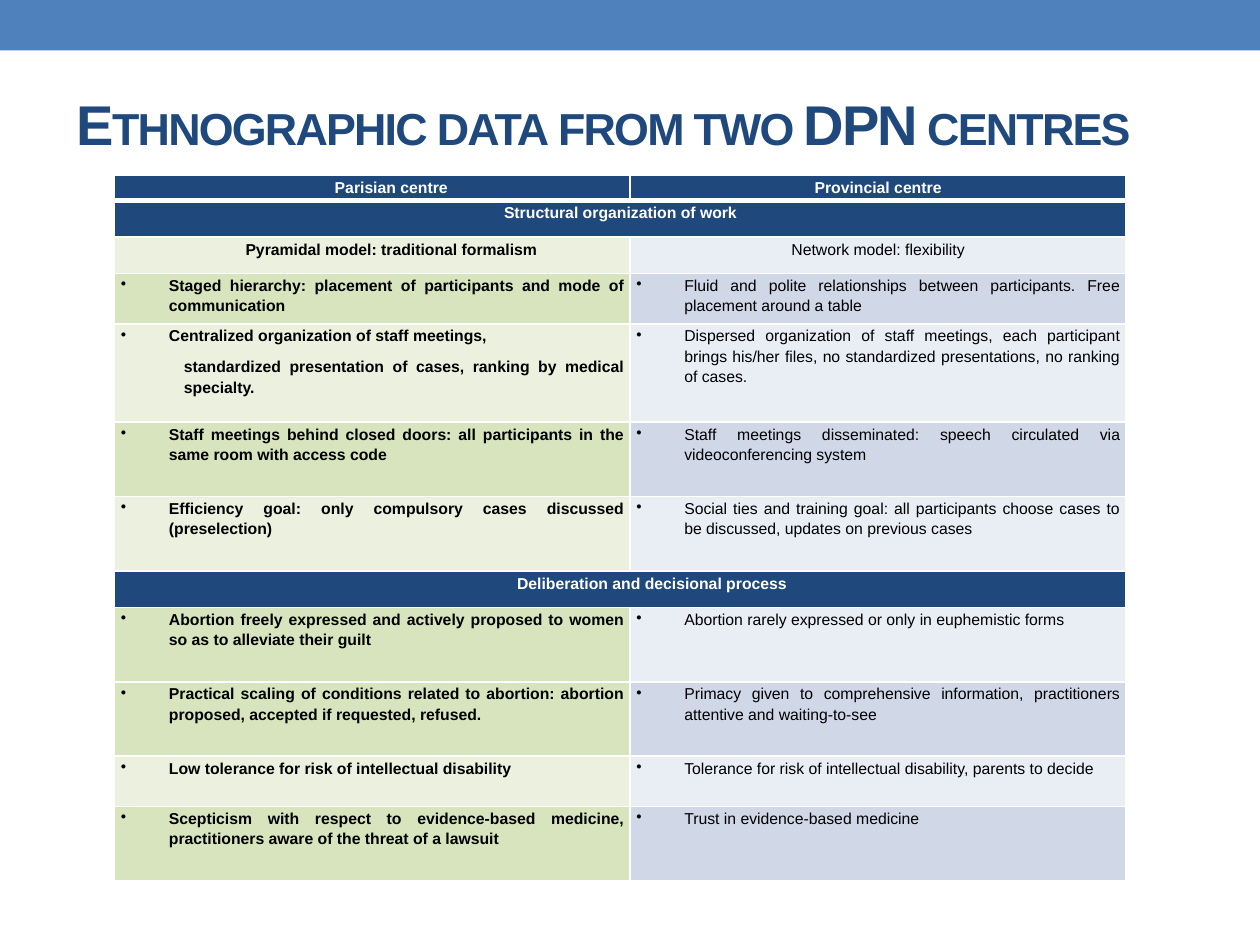
from lxml import etree
from pptx import Presentation
from pptx import util as u
from pptx.dml.color import RGBColor
from pptx.enum import shapes, text
from pptx.oxml import ns

HUES = {
    "bar": "4F81BD", "navy": "1F497D", "white": "FFFFFF", "black": "000000",
    "green": "EBF1DE", "lime": "D7E4BD", "pale": "E9EDF4", "blue": "D0D8E8",
}
MID, JUST = text.PP_ALIGN.CENTER, text.PP_ALIGN.JUSTIFY
HANG = 27.4
HEADS = ("Parisian centre", "Provincial centre")
MODELS = ("Pyramidal model: traditional formalism", "Network model: flexibility")
WORK = [
    (28.8, "Staged hierarchy: placement of participants and mode of communication",
     "Fluid and polite relationships between participants. Free placement around a table"),
    (56.2, "Centralized organization of staff meetings,\n"
     "standardized presentation of cases, ranking by medical specialty.",
     "Dispersed organization of staff meetings, each participant brings his/her files, "
     "no standardized presentations, no ranking of cases."),
    (42.5, "Staff meetings behind closed doors: all participants in the same room with access code",
     "Staff meetings disseminated: speech circulated via videoconferencing system"),
    (42.5, "Efficiency goal: only compulsory cases discussed (preselection)",
     "Social ties and training goal: all participants choose cases to be discussed, "
     "updates on previous cases"),
]
CHOICE = [
    (42.5, "Abortion freely expressed and actively proposed to women so as to alleviate their guilt",
     "Abortion rarely expressed or only in euphemistic forms"),
    (42.5, "Practical scaling of conditions related to abortion: abortion proposed, "
     "accepted if requested, refused.",
     "Primacy given to comprehensive information, practitioners attentive and waiting-to-see"),
    (28.8, "Low tolerance for risk of intellectual disability",
     "Tolerance for risk of intellectual disability, parents to decide"),
    (42.5, "Scepticism with respect to evidence-based medicine, practitioners aware of "
     "the threat of a lawsuit",
     "Trust in evidence-based medicine"),
]
SPLIT = 3 + len(WORK)


class Deck:
    def __init__(self):
        self.show = Presentation()
        self.show.slide_width, self.show.slide_height = u.Pt(720), u.Pt(540)
        self.slide = self.show.slides.add_slide(self.show.slide_layouts[6])
        self.face = "Arial"

    def hue(self, name):
        return RGBColor.from_string(HUES[name])

    def paint(self, item, name):
        item.fill.solid()
        item.fill.fore_color.rgb = self.hue(name)

    def style(self, para, size, name, bold):
        font = para.font
        font.name, font.size, font.bold = self.face, u.Pt(size), bold
        font.color.rgb = self.hue(name)

    def bar(self, box, name):
        bar = self.slide.shapes.add_shape(shapes.MSO_SHAPE.RECTANGLE, *map(u.Pt, box))
        bar.shadow.inherit = False
        self.paint(bar, name)
        bar.line.fill.background()

    def title(self, box, words):
        frame = self.slide.shapes.add_textbox(*map(u.Pt, box)).text_frame
        frame.word_wrap = True
        frame.vertical_anchor = text.MSO_ANCHOR.MIDDLE
        para = frame.paragraphs[0]
        run = para.add_run()
        run.text = words
        self.style(para, 32, "navy", True)
        props = run._r.get_or_add_rPr()
        props.set("cap", "small")
        props.set("spc", "-100")

    def grid(self, spot, cols, rows):
        box = (*spot, sum(cols), sum(rows))
        grid = self.slide.shapes.add_table(len(rows), len(cols), *map(u.Pt, box)).table
        grid.first_row = grid.horz_banding = False
        for col, wide in zip(grid.columns, cols):
            col.width = u.Pt(wide)
        for row, high in zip(grid.rows, rows):
            row.height = u.Pt(high)
        return grid

    def edge(self, cell, top, base):
        props = cell._tc.get_or_add_tcPr()
        sides = (("lnL", 1), ("lnR", 1), ("lnT", top), ("lnB", base))
        for spot, (side, wide) in enumerate(sides):
            line = etree.Element(ns.qn("a:" + side), w=str(u.Pt(wide)))
            fill = etree.SubElement(line, ns.qn("a:solidFill"))
            etree.SubElement(fill, ns.qn("a:srgbClr"), val=HUES["white"])
            props.insert(spot, line)

    def cell(self, cell, words, fill, ink="black", bold=True, align=MID,
             left=0, hang=0, lead=0, top=1, base=1):
        self.paint(cell, fill)
        self.edge(cell, top, base)
        cell.margin_left = cell.margin_right = u.Pt(3.6)
        cell.margin_top, cell.margin_bottom = u.Pt(0.7), 0
        cell.text_frame.text = words
        for spot, para in enumerate(cell.text_frame.paragraphs):
            self.style(para, 9, ink, bold)
            para.alignment, para.line_spacing = align, 1.15
            para.space_before, para.space_after = u.Pt(lead), u.Pt(6)
            props = para._p.get_or_add_pPr()
            dent = 0 if spot else hang
            props.set("marL", str(u.Pt(36 if spot else left)))
            props.set("indent", str(u.Pt(dent)))
            kind = "a:buChar" if dent else "a:buNone"
            mark = etree.Element(ns.qn(kind), {"char": "•"} if dent else {})
            props.find(ns.qn("a:defRPr")).addprevious(mark)

    def band(self, grid, row, words, left=0, top=1):
        first, last = grid.cell(row, 0), grid.cell(row, 1)
        first.merge(last)
        self.cell(first, words, "navy", "white", left=left, lead=6, top=top)
        self.paint(last, "navy")
        self.edge(last, top, 1)

    def points(self, grid, start, items):
        for row, (_, *pair) in enumerate(items, start):
            odd = row % 2 == 1
            fills = ("lime" if odd or row == SPLIT + 1 else "green",
                     "blue" if odd else "pale")
            for col, (words, fill) in enumerate(zip(pair, fills)):
                self.cell(grid.cell(row, col), words, fill, bold=col == 0,
                          align=JUST, left=HANG, hang=-HANG)


def main():
    deck = Deck()
    deck.bar((0, 0, 720, 28.8), "bar")
    deck.title((36.7, 31.7, 648, 77.8), "Ethnographic data from two DPN centres")
    rows = [14.4, 20.9, 20.9, *(item[0] for item in WORK),
            20.9, *(item[0] for item in CHOICE)]
    grid = deck.grid((65.5, 100.1), (294.5, 283.5), rows)
    for col, dent in enumerate((21.6, 0)):
        deck.cell(grid.cell(0, col), HEADS[col], "navy", "white", left=dent, base=3)
        deck.cell(grid.cell(2, col), MODELS[col], ("green", "pale")[col],
                  bold=col == 0, left=dent, lead=6)
    deck.band(grid, 1, "Structural organization of work", top=3)
    deck.points(grid, 3, WORK)
    deck.band(grid, SPLIT, "Deliberation and decisional process", left=36)
    deck.points(grid, SPLIT + 1, CHOICE)
    deck.show.save("out.pptx")


if __name__ == "__main__":
    main()
